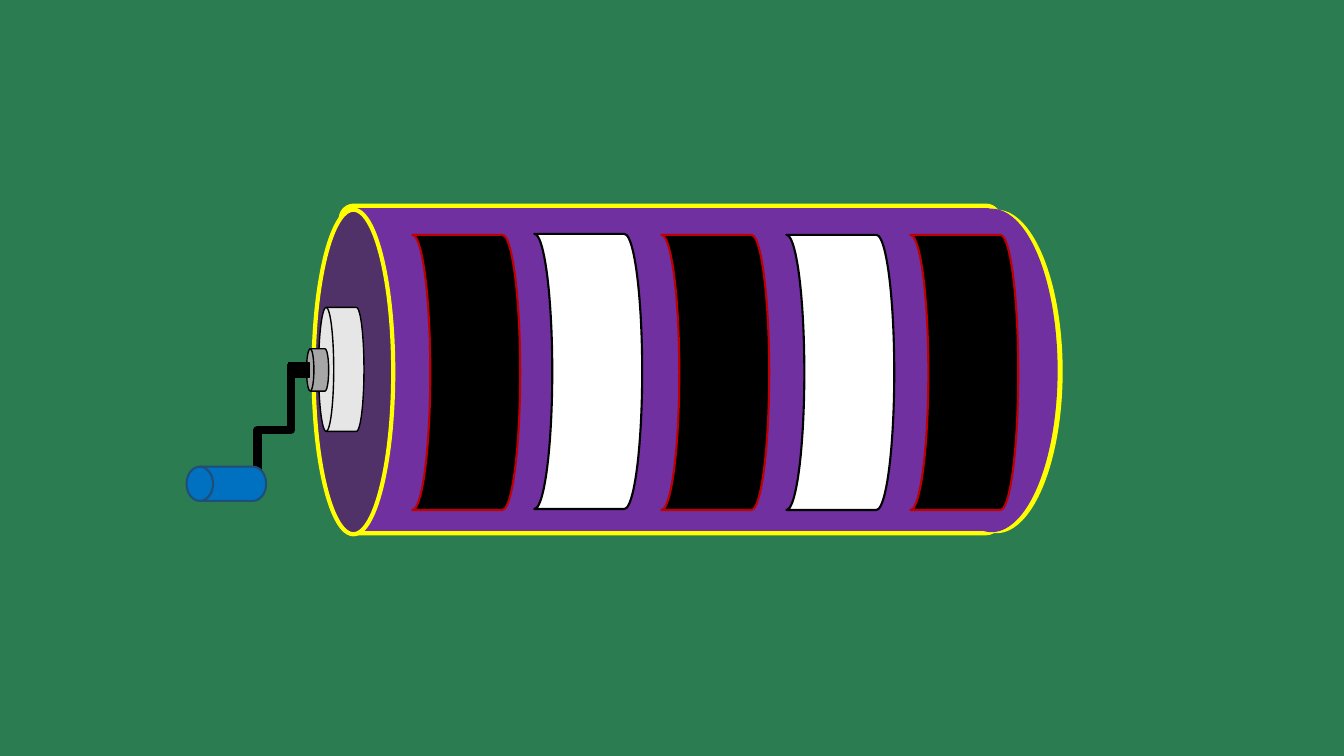
from lxml import etree
from pptx import Presentation
from pptx.dml.color import RGBColor
from pptx.enum.shapes import MSO_CONNECTOR, MSO_SHAPE
from pptx.oxml.ns import qn
from pptx.util import Pt

PX = 9144  # 100 px to the inch
ELLIPSE = MSO_SHAPE.OVAL
ROUNDED = MSO_SHAPE.ROUNDED_RECTANGLE
RECTANGLE = MSO_SHAPE.RECTANGLE
DRUM = MSO_SHAPE.FLOWCHART_DIRECT_ACCESS_STORAGE
CURVED_BAND = MSO_SHAPE.FLOWCHART_STORED_DATA
ELBOW = MSO_CONNECTOR.ELBOW

COLORS = {
    "green": "2C7C52",
    "yellow": "FFFF00",
    "purple": "7030A0",
    "dark purple": "503268",
    "light gray": "E7E6E6",
    "gray": "A6A6A6",
    "black": "000000",
    "white": "FFFFFF",
    "red": "C00000",
    "blue": "0070C0",
    "dark blue": "1F4E79",
}


def color(name):
    return RGBColor.from_string(COLORS[name])


def add_part(kind, box, fill, outline=None, weight=1):
    """Draw one part of the cylinder; drums and bands face left."""
    part = slide.shapes.add_shape(kind, *(n * PX for n in box))
    part.shadow.inherit = False
    part.fill.solid()
    part.fill.fore_color.rgb = color(fill)
    if outline:
        part.line.color.rgb = color(outline)
        part.line.width = Pt(weight)
    else:
        part.line.fill.background()
    if kind in (DRUM, CURVED_BAND):
        part._element.spPr.find(qn("a:xfrm")).set("flipH", "1")
    return part


prs = Presentation()
prs.slide_width, prs.slide_height = 1333 * PX, 750 * PX
slide = prs.slides.add_slide(prs.slide_layouts[6])
slide.background.fill.solid()
slide.background.fill.fore_color.rgb = color("green")

# Cylinder body, its ends and the axle
add_part(ELLIPSE, (923, 208, 131, 321), "yellow")
body = add_part(ROUNDED, (338, 204, 653, 325), "purple", "yellow", 3)
body.adjustments[0] = 0.04
add_part(ELLIPSE, (311, 208, 79, 322), "dark purple", "yellow", 3)
add_part(DRUM, (316, 305, 45, 123), "light gray", "black")
add_part(ELLIPSE, (918, 207, 131, 321), "purple")
add_part(DRUM, (304, 346, 22, 42), "gray", "black")
add_part(RECTANGLE, (286, 360, 21, 14), "black", "black")

# Alternating bands around the body
for i, (left, top) in enumerate([(409, 233), (530, 232), (656, 233), (780, 233), (903, 233)]):
    fill, outline = ("white", "black") if i % 2 else ("black", "red")
    add_part(CURVED_BAND, (left, top, 107, 273), fill, outline, 1.5)

# Crank: the elbow is turned a quarter so that it starts downwards
crank = slide.shapes.add_connector(ELBOW, 207 * PX, 410 * PX, 337 * PX, 443 * PX)
crank.line.color.rgb = color("black")
crank.line.width = Pt(6)
crank_properties = crank._element.spPr
crank_properties.find(qn("a:xfrm")).set("rot", str(90 * 60000))
etree.SubElement(crank_properties, qn("a:effectLst"))

# Handle
add_part(DRUM, (185, 463, 79, 34), "blue", "dark blue", 1.5)

prs.save("out.pptx")
